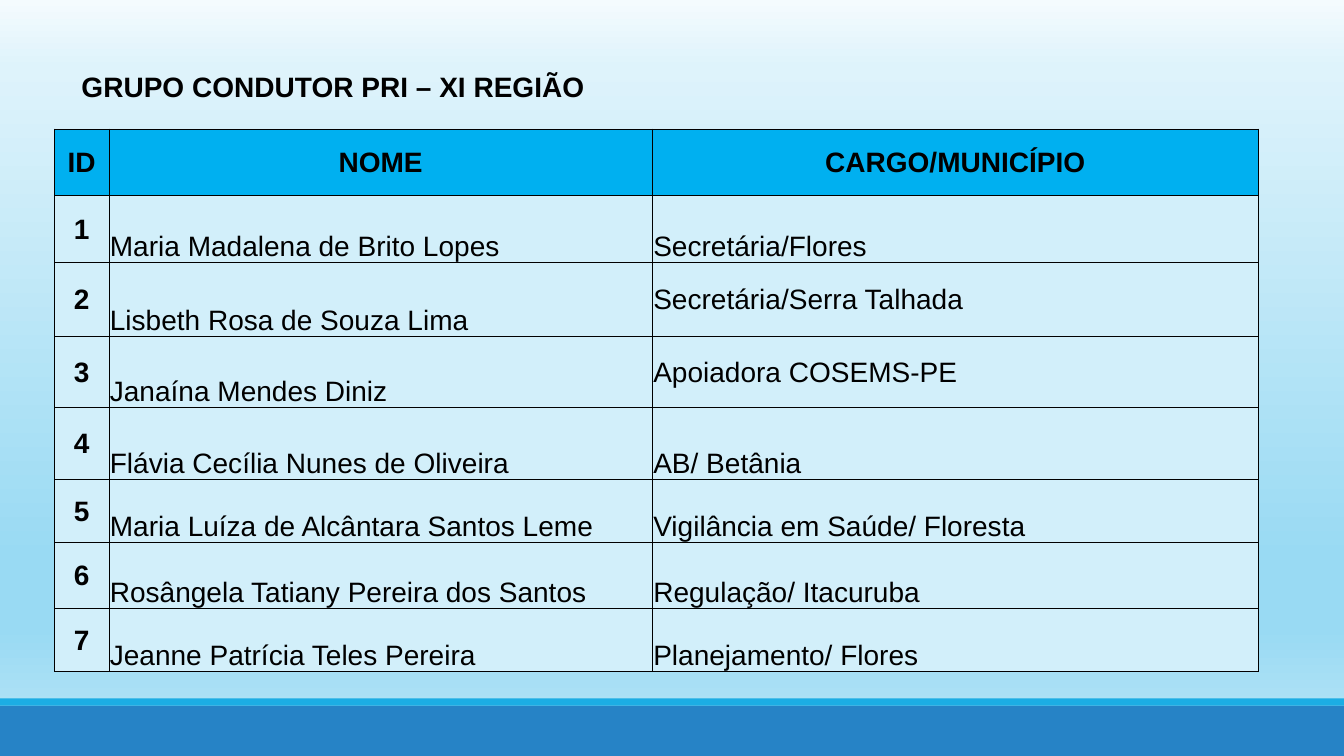
from lxml import etree
from pptx import Presentation, util as u
from pptx.dml.color import RGBColor
from pptx.enum import shapes, text
from pptx.oxml.ns import qn

# Content
TITLE = "GRUPO CONDUTOR PRI – XI REGIÃO"
HEAD = ("ID", "NOME", "CARGO/MUNICÍPIO")
PEOPLE = [
    ("Maria Madalena de Brito Lopes", "Secretária/Flores"),
    ("Lisbeth Rosa de Souza Lima", "Secretária/Serra Talhada"),
    ("Janaína Mendes Diniz", "Apoiadora COSEMS-PE"),
    ("Flávia Cecília Nunes de Oliveira", "AB/ Betânia"),
    ("Maria Luíza de Alcântara Santos Leme", "Vigilância em Saúde/ Floresta"),
    ("Rosângela Tatiany Pereira dos Santos", "Regulação/ Itacuruba"),
    ("Jeanne Patrícia Teles Pereira", "Planejamento/ Flores"),
]
ROWS = [HEAD] + [(str(i), *who) for i, who in enumerate(PEOPLE, 1)]

# Layout in inches
WIDE, HIGH = 13.33, 7.5
COLS = (0.54, 5.39, 6.01)
TALL = (0.66, 0.66, 0.74, 0.7, 0.72, 0.62, 0.66, 0.62)
MID_ROLE = (2, 3)        # rows whose role sits mid-height
BOLD_RULE = (1, 5, 6, 7)  # rows with a thicker rule between name and role

# Colours
BLACK = RGBColor(0, 0, 0)
CYAN = RGBColor(0x00, 0xB0, 0xF0)
PALE = RGBColor(0xD2, 0xEF, 0xFA)
BASE = RGBColor(0x26, 0x83, 0xC6)
STRIPE = RGBColor(0x1C, 0xAD, 0xE4)
SKY = [
    (0, RGBColor(0xF4, 0xFB, 0xFE)),
    (9, RGBColor(0xDE, 0xF3, 0xFB)),
    (74, RGBColor(0x99, 0xDA, 0xF3)),
    (83, RGBColor(0x99, 0xDA, 0xF3)),
    (100, RGBColor(0xBB, 0xE6, 0xF7)),
]


def paint_sky(slide):
    fill = slide.background.fill
    fill.gradient()
    fill.gradient_angle = 270
    stops = next(slide.element.iter(qn("a:gsLst")))
    for old in list(stops):
        stops.remove(old)
    for pos, tone in SKY:
        stop = etree.SubElement(stops, qn("a:gs"), pos=str(pos * 1000))
        etree.SubElement(stop, qn("a:srgbClr"), val=str(tone))


def add_bar(slide, top, tall, tone):
    bar = slide.shapes.add_shape(shapes.MSO_SHAPE.RECTANGLE, 0, u.Inches(top),
                                 u.Inches(WIDE), u.Inches(tall))
    bar.shadow.inherit = False
    bar.fill.solid()
    bar.fill.fore_color.rgb = tone
    bar.line.fill.background()


def add_run(para, words, bold):
    run = para.add_run()
    run.text = words
    run.font.name = "Arial"
    run.font.size = u.Pt(20)
    run.font.bold = bold
    run.font.color.rgb = BLACK


def add_rules(cell, row, col):
    thick = row in BOLD_RULE
    last = row == len(ROWS) - 1 and col > 0
    sides = {"L": thick and col == 2, "R": thick and col == 1,
             "T": False, "B": last}
    props = cell._tc.get_or_add_tcPr()
    for side, heavy in sides.items():
        size = u.Pt(1 if heavy else 0.5)
        rule = etree.SubElement(props, qn("a:ln" + side), w=str(size))
        fill = etree.SubElement(rule, qn("a:solidFill"))
        etree.SubElement(fill, qn("a:srgbClr"), val=str(BLACK))


def fill_cell(cell, words, row, col):
    add_rules(cell, row, col)
    cell.fill.solid()
    cell.fill.fore_color.rgb = PALE if row else CYAN
    cell.margin_left = cell.margin_right = cell.margin_top = u.Inches(0.01)
    cell.margin_bottom = 0
    label = row == 0 or col == 0
    mid = label or (col == 2 and row in MID_ROLE)
    cell.vertical_anchor = text.MSO_ANCHOR.MIDDLE if mid else text.MSO_ANCHOR.BOTTOM
    para = cell.text_frame.paragraphs[0]
    para.alignment = text.PP_ALIGN.CENTER if label else text.PP_ALIGN.LEFT
    add_run(para, words, label)


def add_group(slide):
    frame = slide.shapes.add_table(len(ROWS), len(COLS), u.Inches(0.54), u.Inches(1.28),
                                   u.Inches(sum(COLS)), u.Inches(sum(TALL)))
    table = frame.table
    for col, width in zip(table.columns, COLS):
        col.width = u.Inches(width)
    for line, tall in zip(table.rows, TALL):
        line.height = u.Inches(tall)
    for r, row in enumerate(ROWS):
        for c, words in enumerate(row):
            fill_cell(table.cell(r, c), words, r, c)


def add_title(slide):
    box = slide.shapes.add_textbox(u.Inches(0.71), u.Inches(0.64),
                                   u.Inches(9.61), u.Inches(0.44))
    box.text_frame.word_wrap = True
    add_run(box.text_frame.paragraphs[0], TITLE, True)


def main():
    deck = Presentation()
    deck.slide_width, deck.slide_height = u.Inches(WIDE), u.Inches(HIGH)
    slide = deck.slides.add_slide(deck.slide_layouts[6])
    paint_sky(slide)
    # Footer bars
    add_bar(slide, 7, 0.5, BASE)
    add_bar(slide, 6.93, 0.07, STRIPE)
    # Table and title
    add_group(slide)
    add_title(slide)
    deck.save("out.pptx")


if __name__ == "__main__":
    main()
